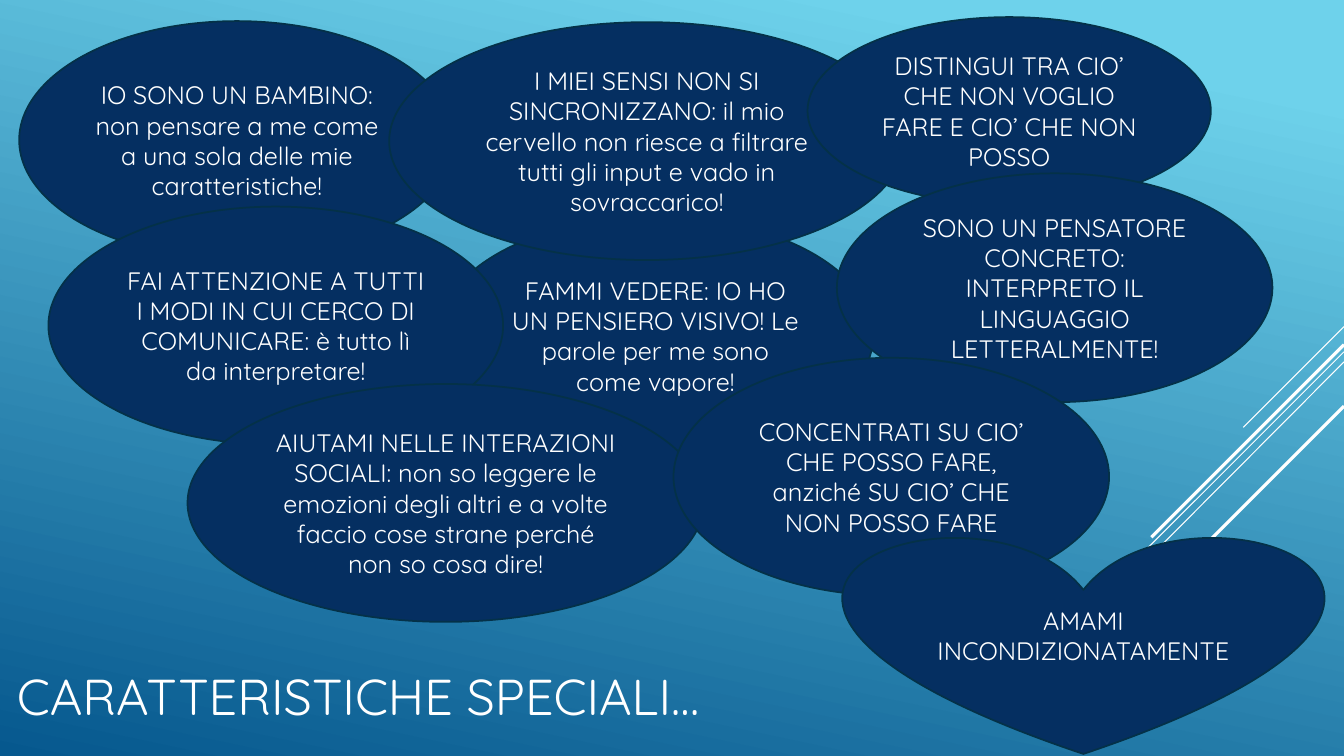
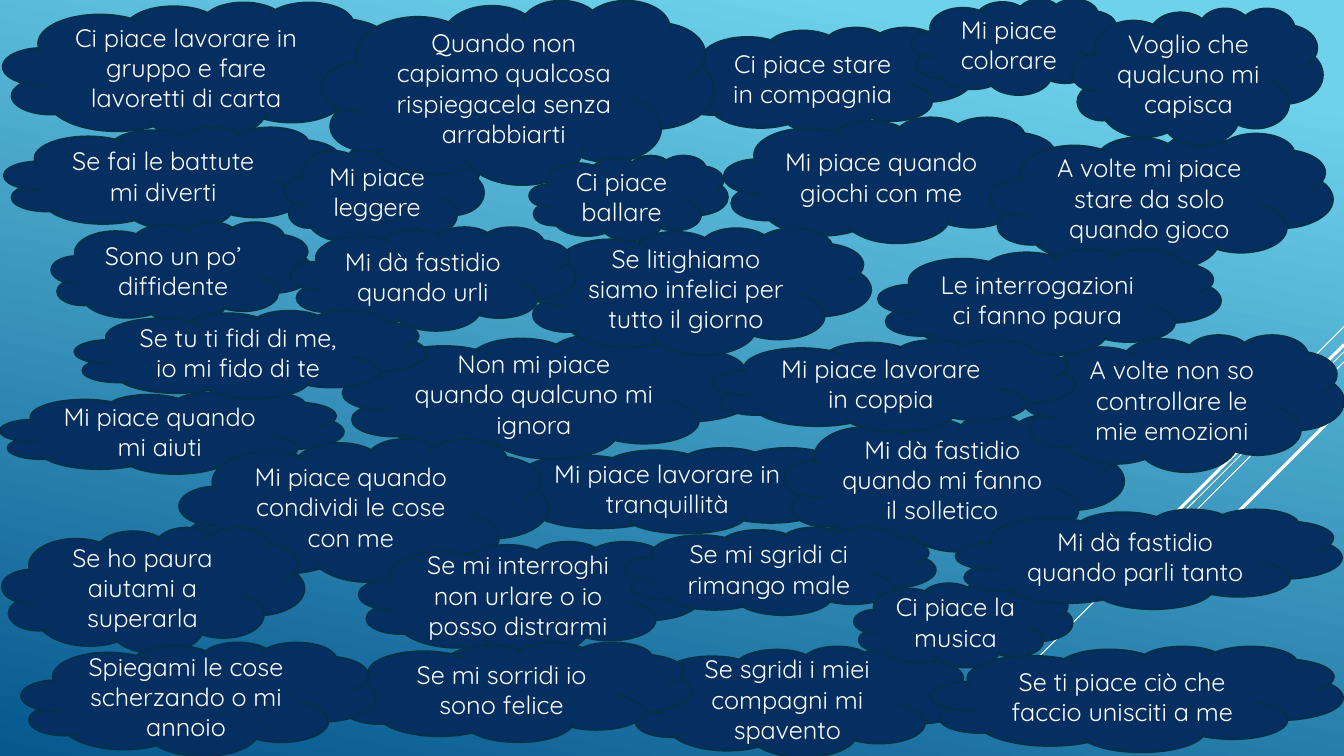
from pptx import Presentation
from pptx.dml.color import RGBColor
from pptx.enum.shapes import MSO_CONNECTOR, MSO_SHAPE as Shape
from pptx.enum.text import MSO_ANCHOR as Anchor, PP_ALIGN as Align
from pptx.oxml.ns import qn
from pptx.util import Pt
from lxml import etree

PX = 9144  # 100 px to the inch
WIDE, HIGH = 1333, 750
FONT = "Quicksand"
SKY = RGBColor(0x6E, 0xD2, 0xEB)
SEA = RGBColor(0x06, 0x58, 0x8E)
NAVY = RGBColor(0x05, 0x2F, 0x61)
EDGE = RGBColor(0x04, 0x31, 0x48)
WHITE = RGBColor(0xFF, 0xFF, 0xFF)

# Diagonal rays shared by the slides: start, end, weight
RAYS = [
    (1333, 324, 1233, 424, 0.75),
    (1333, 349, 1007, 675, 0.75),
    (1333, 359, 1126, 567, 0.75),
    (1333, 342, 1142, 533, 2.25),
    (1333, 403, 1194, 542, 2.25),
]

# Left, top, width, height, text; from back to front
TRAITS = [
    (434, 215, 432, 236, "FAMMI VEDERE: IO HO UN PENSIERO VISIVO! Le parole per me sono come vapore!"),
    (19, 21, 432, 236, "IO SONO UN BAMBINO: non pensare a me come a una sola delle mie caratteristiche!"),
    (386, 22, 511, 236, "I MIEI SENSI NON SI SINCRONIZZANO: il mio cervello non riesce a filtrare "
     "tutti gli input e vado in sovraccarico!"),
    (801, 17, 400, 186, "DISTINGUI TRA CIO’ CHE NON VOGLIO FARE E CIO’ CHE NON POSSO"),
    (48, 205, 451, 236, "FAI ATTENZIONE A TUTTI I MODI IN CUI CERCO DI COMUNICARE: "
     "è tutto lì da interpretare!"),
    (830, 172, 432, 227, "SONO UN PENSATORE CONCRETO: INTERPRETO IL LINGUAGGIO LETTERALMENTE!"),
    (186, 381, 512, 236, "AIUTAMI NELLE INTERAZIONI SOCIALI: non so leggere le emozioni degli altri "
     "e a volte faccio cose strane perché non so cosa dire!"),
    (668, 355, 432, 236, "CONCENTRATI SU CIO’ CHE POSSO FARE, anziché SU CIO’ CHE NON POSSO FARE"),
]
LOVE = (837, 531, 475, 217, "AMAMI INCONDIZIONATAMENTE")

VOICES = [
    (483, 444, 385, 85, "Mi piace lavorare in tranquillità"),
    (669, 27, 295, 106, "Ci piace stare in compagnia"),
    (904, -1, 208, 95, "Mi piace colorare"),
    (3, 2, 391, 136, "Ci piace lavorare in gruppo e fare lavoretti di carta"),
    (4, 126, 340, 102, "Se fai le battute mi diverti"),
    (718, 116, 336, 125, "Mi piace quando giochi con me"),
    (982, 132, 340, 135, "A volte mi piace stare da solo quando gioco"),
    (778, 411, 337, 136, "Mi dà fastidio quando mi fanno il solletico"),
    (1063, 8, 249, 136, "Voglio che qualcuno mi capisca"),
    (282, 140, 198, 105, "Mi piace leggere"),
    (319, 0, 389, 183, "Quando non capiamo qualcosa rispiegacela senza arrabbiarti"),
    (340, 332, 408, 123, "Non mi piace quando qualcuno mi ignora"),
    (1014, 332, 319, 136, "A volte non so controllare le mie emozioni"),
    (51, 220, 260, 101, "Sono un po’ diffidente"),
    (525, 154, 197, 85, "Ci piace ballare"),
    (871, 247, 340, 105, "Le interrogazioni ci fanno paura"),
    (521, 226, 343, 126, "Se litighiamo siamo infelici per tutto il giorno"),
    (288, 225, 283, 103, "Mi dà fastidio quando urli"),
    (0, 389, 341, 81, "Mi piace quando mi aiuti"),
    (74, 308, 349, 87, "Se tu ti fidi di me, io mi fido di te"),
    (178, 435, 366, 142, "Mi piace quando condividi le cose con me"),
    (623, 641, 340, 110, "Se sgridi i miei compagni mi spavento"),
    (923, 641, 409, 105, "Se ti piace ciò che faccio unisciti a me"),
    (2, 523, 300, 125, "Se ho paura aiutami a superarla"),
    (706, 337, 361, 91, "Mi piace lavorare in coppia"),
    (356, 537, 340, 112, "Se mi interroghi non urlare o io posso distrarmi"),
    (619, 523, 309, 87, "Se mi sgridi ci rimango male"),
    (334, 637, 352, 99, "Se mi sorridi io sono felice"),
    (21, 637, 352, 113, "Spiegami le cose scherzando o mi annoio"),
    (847, 576, 217, 86, "Ci piace la musica"),
    (948, 505, 383, 99, "Mi dà fastidio quando parli tanto"),
]


def write(slide, box, text, kind=None, size=18, align=Align.CENTER):
    """Place text in a navy shape of the given kind, or in a bare text box."""
    place = [n * PX for n in box]
    if kind is None:
        shape = slide.shapes.add_textbox(*place)
    else:
        shape = slide.shapes.add_shape(kind, *place)
        shape.shadow.inherit = False
        shape.fill.solid()
        shape.fill.fore_color.rgb = NAVY
        shape.line.color.rgb = EDGE
        shape.line.width = Pt(1.25)
    frame = shape.text_frame
    frame.word_wrap = True
    frame.vertical_anchor = Anchor.MIDDLE
    para = frame.paragraphs[0]
    para.alignment = align
    run = para.add_run()
    run.text = text
    run.font.name = FONT
    run.font.size = Pt(size)
    run.font.color.rgb = WHITE


def start(deck):
    """Add a blank slide with the shared gradient and rays."""
    slide = deck.slides.add_slide(deck.slide_layouts[6])
    fill = slide.background.fill
    fill.gradient()
    fill.gradient_angle = 360 - 102
    for stop, color, pos in zip(fill.gradient_stops, (SKY, SEA), (0.1, 1)):
        stop.color.rgb = color
        stop.position = pos
    for *ends, weight in RAYS:
        ray = slide.shapes.add_connector(MSO_CONNECTOR.STRAIGHT, *[n * PX for n in ends])
        ray.line.color.rgb = WHITE
        ray.line.width = Pt(weight)
        etree.SubElement(ray._element.spPr, qn("a:effectLst"))
    return slide


deck = Presentation()
deck.slide_width, deck.slide_height = WIDE * PX, HIGH * PX

slide = start(deck)
for *box, text in TRAITS:
    write(slide, box, text, kind=Shape.OVAL)
*box, text = LOVE
write(slide, box, text, kind=Shape.HEART)
write(slide, (7, 634, 933, 112), "CARATTERISTICHE SPECIALI…", size=36, align=Align.LEFT)

slide = start(deck)
for *box, text in VOICES:
    write(slide, box, text, kind=Shape.CLOUD)

deck.save("out.pptx")
